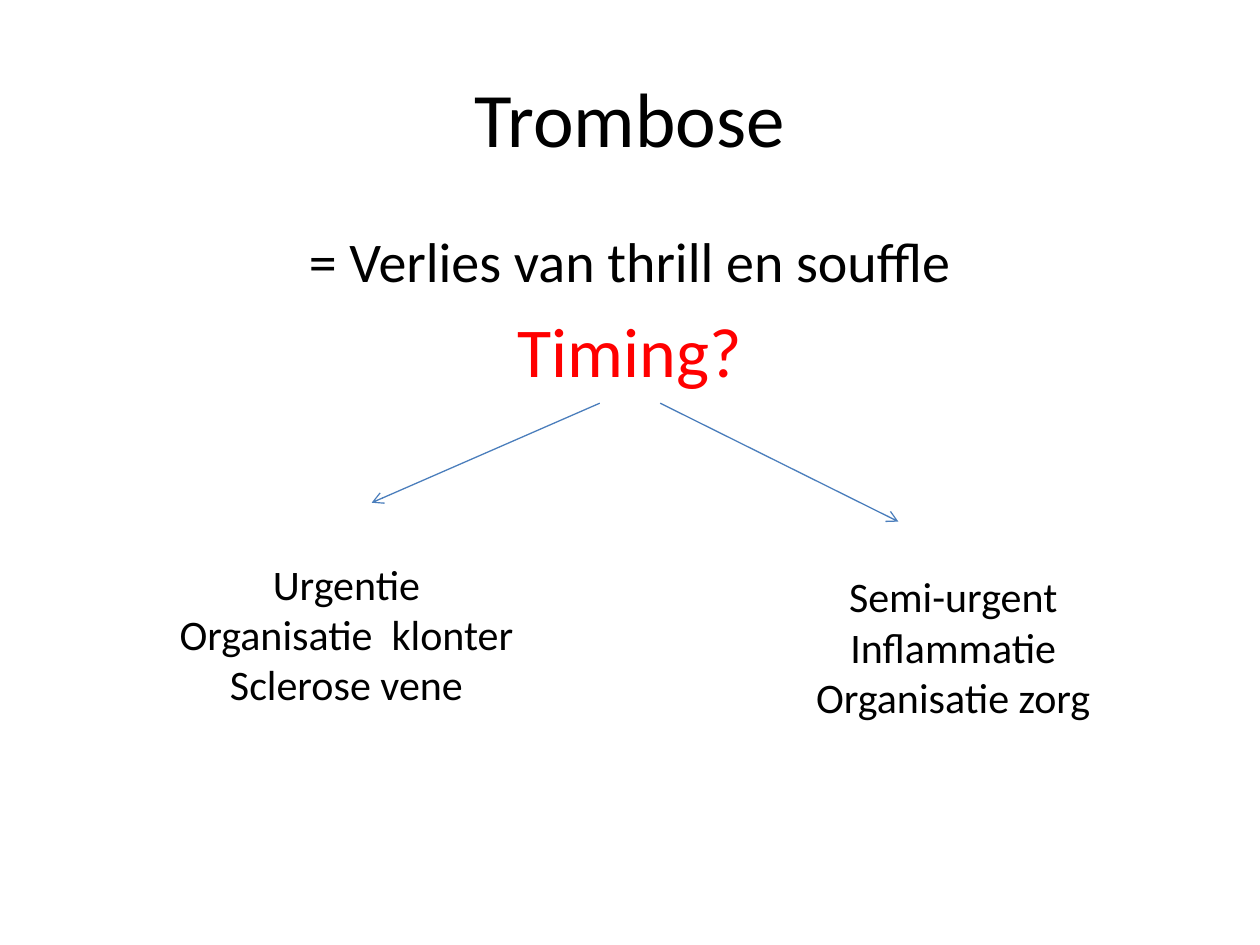
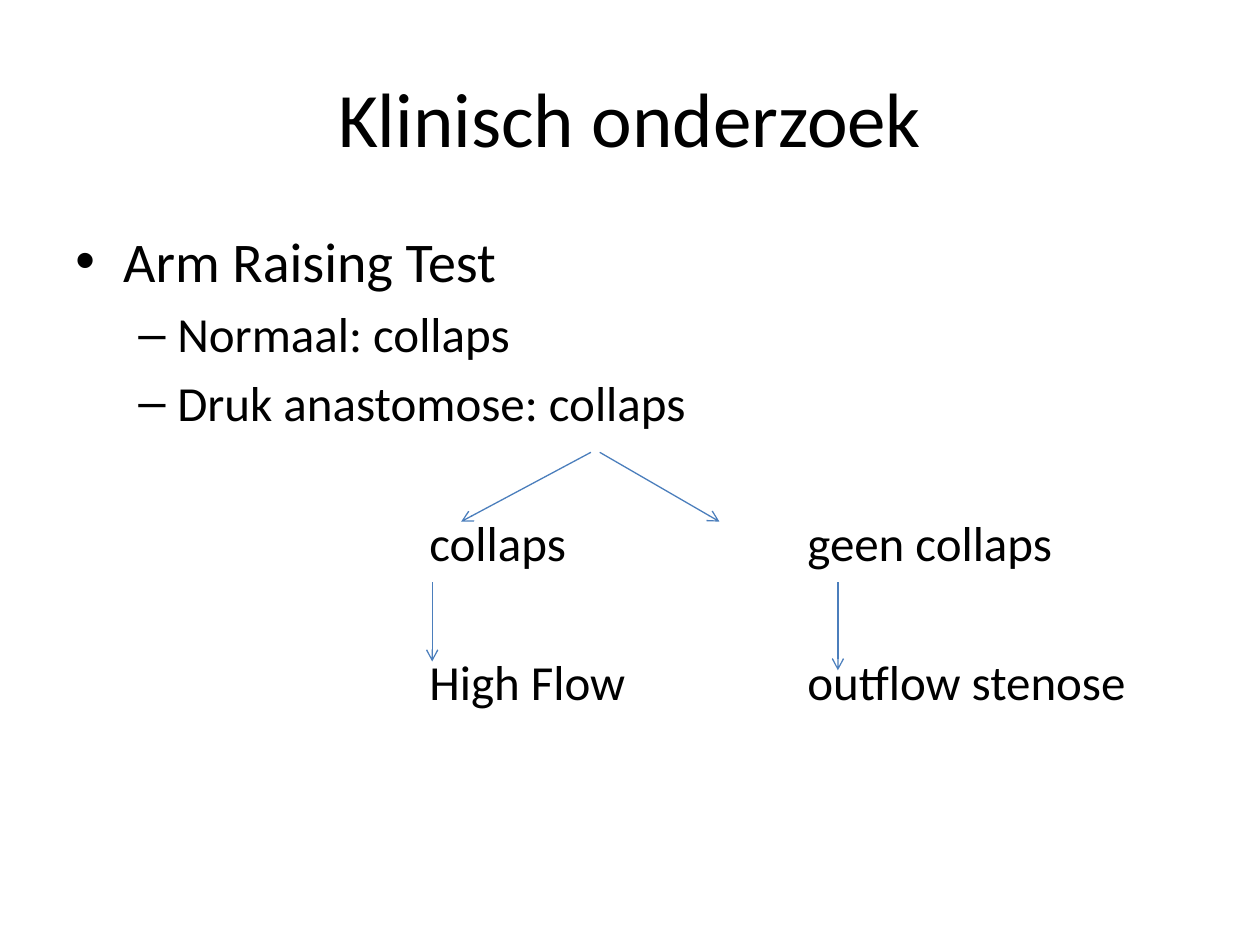
from lxml import etree
from pptx import Presentation
from pptx import util as u
from pptx.dml.color import RGBColor
from pptx.enum import shapes, text
from pptx.oxml.ns import qn

BLACK, RED, BLUE = "000000", "FF0000", "4B7EBC"
FONT = "Calibri"
LINE_HEIGHT = 1.22  # line pitch as a share of the font size
CENTER, LEFT = text.PP_ALIGN.CENTER, text.PP_ALIGN.LEFT

deck = Presentation()
deck.slide_width, deck.slide_height = u.Inches(10), u.Inches(7.5)
TITLE_AREA = (0.5, 0.3, 9, 1.25)
BODY_AREA = (0.5, 1.75, 9, 4.95)


def add_text(slide, area, lines, align=LEFT, gap=0.0, anchor=text.MSO_ANCHOR.TOP):
    """Lines are (wording, size, colour); gap is a share of the font size."""
    box = slide.shapes.add_textbox(*map(u.Inches, area))
    frame = box.text_frame
    frame.word_wrap = True
    frame.vertical_anchor = anchor
    for i, (wording, size, colour) in enumerate(lines):
        paragraph = frame.add_paragraph() if i else frame.paragraphs[0]
        paragraph.text = wording
        paragraph.alignment = align
        paragraph.space_before = u.Pt(gap * size)
        paragraph.font.name = FONT
        paragraph.font.size = u.Pt(size)
        paragraph.font.color.rgb = RGBColor.from_string(colour)
    return frame


def add_arrow(slide, start, end):
    arrow = slide.shapes.add_connector(
        shapes.MSO_CONNECTOR.STRAIGHT, *map(u.Inches, (*start, *end)))
    arrow.line.color.rgb = RGBColor.from_string(BLUE)
    arrow.line.width = u.Pt(0.75)
    etree.SubElement(arrow.line._get_or_add_ln(), qn("a:tailEnd"), type="arrow")
    etree.SubElement(arrow._element.spPr, qn("a:effectLst"))


# Both slides with their shared title style
pages = []
for heading in ("Trombose", "Klinisch onderzoek"):
    page = deck.slides.add_slide(deck.slide_layouts[6])
    add_text(page, TITLE_AREA, [(heading, 44, BLACK)], CENTER,
             anchor=text.MSO_ANCHOR.MIDDLE)
    pages.append(page)
thrombosis, examination = pages

# Thrombosis: definition and the question of timing
add_text(thrombosis, BODY_AREA,
         [("= Verlies van thrill en souffle", 32, BLACK), ("Timing?", 40, RED)],
         CENTER, gap=0.2)

# Thrombosis: the two answers, each with its arrow
answers = [
    ((4.76, 3.2), (2.95, 3.99), (0.98, 4.38, 3.54, 1.31),
     ("Urgentie", "Organisatie  klonter", "Sclerose vene")),
    ((5.24, 3.2), (7.13, 4.14), (5.87, 4.48, 3.39, 1.31),
     ("Semi-urgent", "Inflammatie", "Organisatie zorg")),
]
for start, end, area, reasons in answers:
    add_arrow(thrombosis, start, end)
    add_text(thrombosis, area, [(reason, 24, BLACK) for reason in reasons], CENTER)

# Examination: bulleted test with its findings
test = add_text(examination, BODY_AREA,
                [("Arm Raising Test", 32, BLACK),
                 ("Normaal: collaps", 28, BLACK),
                 ("Druk anastomose: collaps", 28, BLACK)], gap=0.2)
bullets = [(0, 0.38, 0.38, "•"), (1, 0.81, 0.31, "–"), (1, 0.81, 0.31, "–")]
for paragraph, (level, margin, hanging, mark) in zip(test.paragraphs, bullets):
    paragraph.level = level
    properties = paragraph._p.get_or_add_pPr()
    properties.set("marL", str(u.Inches(margin)))
    properties.set("indent", str(-u.Inches(hanging)))
    etree.SubElement(properties, qn("a:buFont"), typeface="Arial")
    etree.SubElement(properties, qn("a:buChar"), char=mark)

# Examination: outcomes on a grid, two columns three inches apart
outcomes = [("collaps", "geen collaps"), ("High Flow", "outflow stenose")]
first_left, first_top, column = 3.31, 4.02, 3
row = 2 * 28 * (LINE_HEIGHT + 0.2) / 72
for r, outcome_row in enumerate(outcomes):
    for c, outcome in enumerate(outcome_row):
        add_text(examination,
                 (first_left + c * column, first_top + r * row, column, 0.57),
                 [(outcome, 28, BLACK)])

# Examination: arrows from finding to outcome to cause
for start, end in [((4.69, 3.59), (3.66, 4.14)), ((4.76, 3.59), (5.71, 4.14)),
                   ((3.43, 4.62), (3.43, 5.25)), ((6.65, 4.62), (6.65, 5.32))]:
    add_arrow(examination, start, end)

deck.save("out.pptx")
